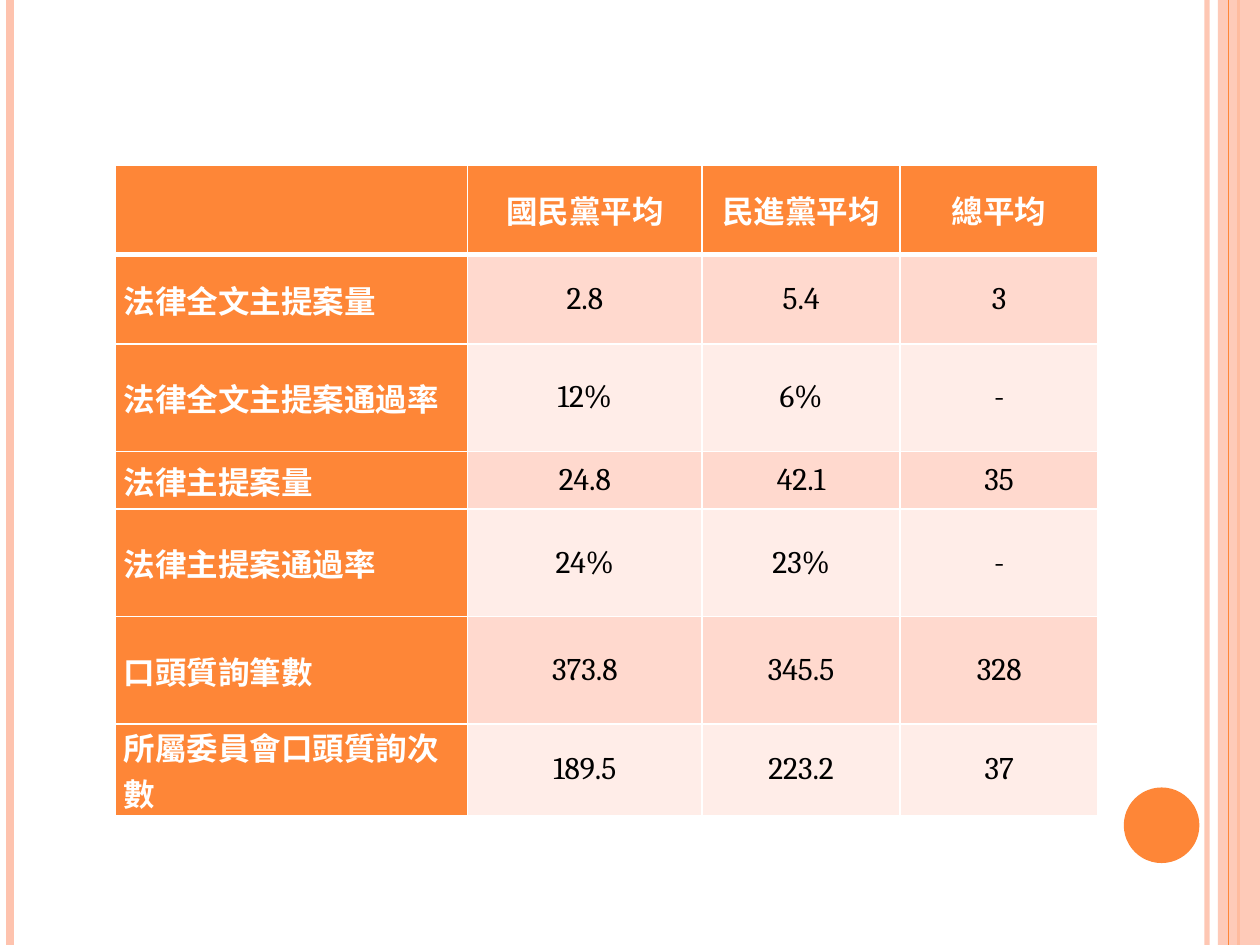
from dataclasses import dataclass

from lxml.etree import SubElement
from pptx import Presentation
from pptx.dml.color import RGBColor
from pptx.enum.shapes import MSO_CONNECTOR, MSO_SHAPE
from pptx.enum.text import MSO_ANCHOR, PP_ALIGN
from pptx.oxml.ns import qn
from pptx.util import Pt

ORANGE = RGBColor(0xFE, 0x86, 0x37)
PEACH = RGBColor(0xFE, 0xC3, 0xAE)
BAND_DARK = RGBColor(0xFF, 0xD9, 0xCE)
BAND_LIGHT = RGBColor(0xFF, 0xED, 0xE8)
WHITE = RGBColor(0xFF, 0xFF, 0xFF)
BLACK = RGBColor(0, 0, 0)

WIDTH, HEIGHT = 720, 540
COLUMN_WIDTHS = (201.6, 134, 113.2, 113.2)
ROW_HEIGHTS = (51, 51, 61.4, 33, 61.4, 61.4, 51)
ROWS = (
    ("", "國民黨平均", "民進黨平均", "總平均"),
    ("法律全文主提案量", "2.8", "5.4", "3"),
    ("法律全文主提案通過率", "12%", "6%", "-"),
    ("法律主提案量", "24.8", "42.1", "35"),
    ("法律主提案通過率", "24%", "23%", "-"),
    ("口頭質詢筆數", "373.8", "345.5", "328"),
    ("所屬委員會口頭質詢次數", "189.5", "223.2", "37"),
)


@dataclass
class Stripe:
    x: float
    weight: float
    color: RGBColor
    opacity: int = 100


@dataclass
class Block:
    preset: MSO_SHAPE
    left: float
    top: float
    width: float
    height: float
    color: RGBColor
    opacity: int = 100


DECORATIONS = (
    Stripe(689.8, 3, PEACH, 93),
    Stripe(5.8, 4.5, PEACH),
    Stripe(707.8, 1.5, ORANGE),
    Block(MSO_SHAPE.RECTANGLE, 696, 0, 24, HEIGHT, PEACH, 87),
    Stripe(702, 0.75, ORANGE),
    Block(MSO_SHAPE.OVAL, 642.2, 450, 43.2, 43.2, ORANGE),
)


def set_opacity(element, percent: int) -> None:
    if percent < 100:
        color = next(element.iter(qn("a:srgbClr")))
        SubElement(color, qn("a:alpha"), val=str(percent * 1000))


def draw_stripe(slide, stripe: Stripe) -> None:
    s = slide.shapes.add_connector(
        MSO_CONNECTOR.STRAIGHT, Pt(stripe.x), Pt(0), Pt(stripe.x), Pt(HEIGHT)
    )
    s.line.width = Pt(stripe.weight)
    s.line.color.rgb = stripe.color
    properties = s._element.spPr
    set_opacity(properties, stripe.opacity)
    SubElement(properties, qn("a:effectLst"))


def draw_block(slide, block: Block) -> None:
    s = slide.shapes.add_shape(
        block.preset, Pt(block.left), Pt(block.top), Pt(block.width), Pt(block.height)
    )
    s.shadow.inherit = False
    s.fill.solid()
    s.fill.fore_color.rgb = block.color
    s.line.fill.background()
    set_opacity(s._element.spPr, block.opacity)


def set_borders(cell, top: float, bottom: float) -> None:
    properties = cell._tc.get_or_add_tcPr()
    for side, weight in (("L", 1), ("R", 1), ("T", top), ("B", bottom)):
        line = SubElement(properties, qn(f"a:ln{side}"), w=str(Pt(weight)))
        fill = SubElement(line, qn("a:solidFill"))
        SubElement(fill, qn("a:srgbClr"), val=str(WHITE))


def fill_cell(cell, text: str, row: int, column: int) -> None:
    heading = row == 0 or column == 0
    set_borders(cell, 3 if row == 1 else 1, 3 if row == 0 else 1)
    cell.fill.solid()
    band = BAND_DARK if row % 2 else BAND_LIGHT
    cell.fill.fore_color.rgb = ORANGE if heading else band
    cell.vertical_anchor = MSO_ANCHOR.MIDDLE
    cell.margin_left = cell.margin_right = Pt(5)
    cell.margin_top = cell.margin_bottom = Pt(0)
    p = cell.text_frame.paragraphs[0]
    p.text = text
    p.alignment = PP_ALIGN.CENTER if column else PP_ALIGN.LEFT
    for r in p.runs:
        r.font.size = Pt(18)
        r.font.name = "Calibri" if row == 0 and column > 1 else "Cambria"
        r.font.bold = heading
        r.font.color.rgb = WHITE if heading else BLACK


def draw_table(slide) -> None:
    table = slide.shapes.add_table(
        len(ROWS), len(COLUMN_WIDTHS), Pt(65.6), Pt(94.6),
        Pt(sum(COLUMN_WIDTHS)), Pt(sum(ROW_HEIGHTS)),
    ).table
    for column, width in zip(table.columns, COLUMN_WIDTHS):
        column.width = Pt(width)
    for row, height in zip(table.rows, ROW_HEIGHTS):
        row.height = Pt(height)
    for i, texts in enumerate(ROWS):
        for j, text in enumerate(texts):
            fill_cell(table.cell(i, j), text, i, j)


def main() -> None:
    prs = Presentation()
    prs.slide_width, prs.slide_height = Pt(WIDTH), Pt(HEIGHT)
    slide = prs.slides.add_slide(prs.slide_layouts[6])
    for item in DECORATIONS:
        if isinstance(item, Stripe):
            draw_stripe(slide, item)
        else:
            draw_block(slide, item)
    draw_table(slide)
    prs.save("out.pptx")


if __name__ == "__main__":
    main()
